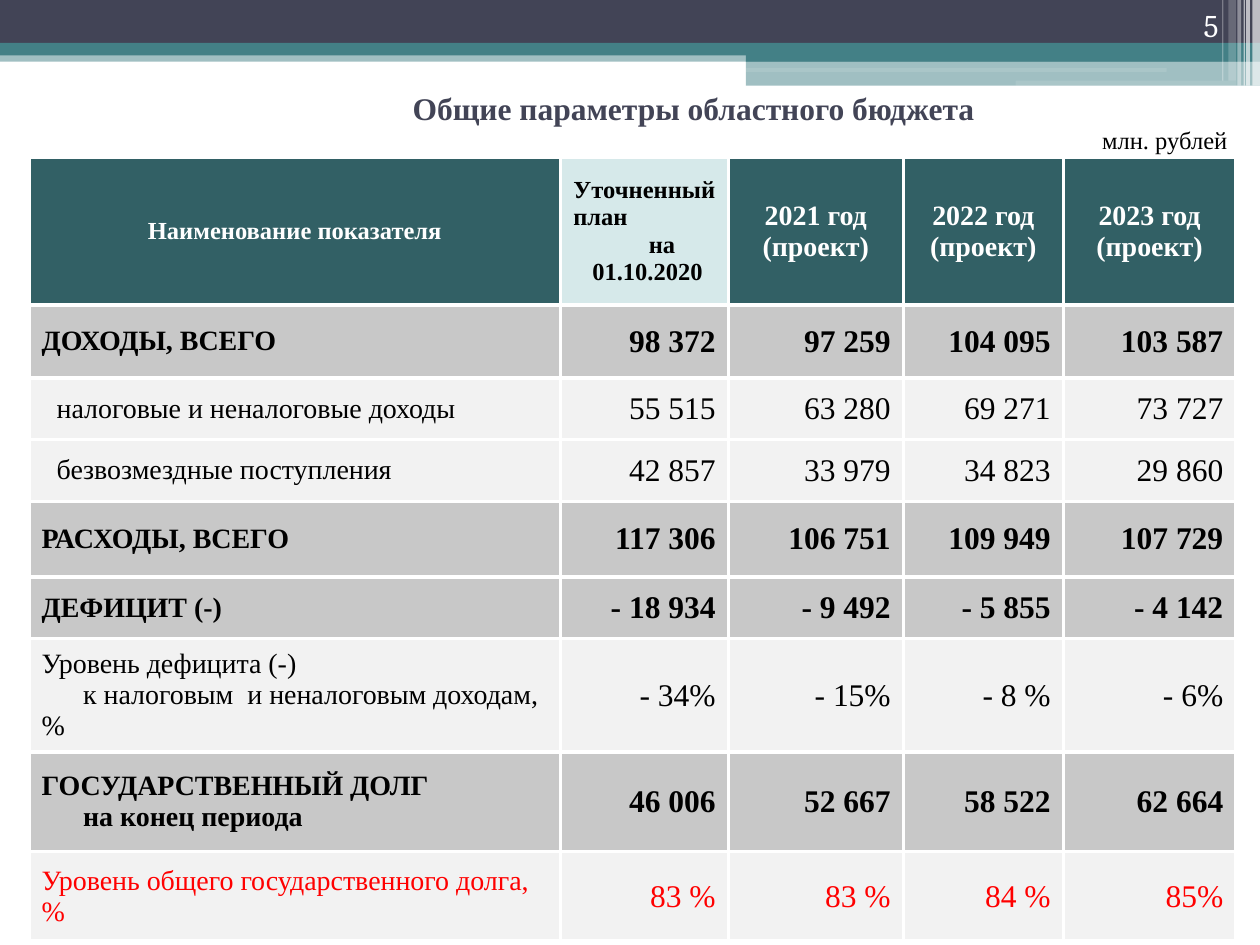
from lxml.etree import SubElement
from pptx import Presentation
from pptx.dml.color import RGBColor
from pptx.enum.shapes import MSO_SHAPE
from pptx.enum.text import MSO_ANCHOR, PP_ALIGN
from pptx.oxml.ns import qn
from pptx.util import Emu, Inches, Pt

SERIF = "Times New Roman"
TEAL, NAVY, WHITE, BLACK, RED = "438086", "424456", "FFFFFF", "000000", "FF0000"
DARK, PALE, GREY, LIGHT = "326065", "D6E9EA", "C8C8C8", "F2F2F2"
LEFT, MID, RIGHT = PP_ALIGN.LEFT, PP_ALIGN.CENTER, PP_ALIGN.RIGHT

BANDS = [
    (0, 0.4, 10, 0.09, TEAL, 50),
    (0, 0, 10, 0.34, NAVY, 100),
    (0, 0.34, 10, 0.1, TEAL, 100),
    (5.92, 0.39, 4.08, 0.1, TEAL, 100),
    (5.92, 0.48, 4.08, 0.2, TEAL, 50),
]
STREAKS = [(5.91, 0.54, 3.35, 0.03, WHITE, 11), (8.06, 0.64, 1.75, 0.04, WHITE, 11)]
STRIPES = [
    (9.94, 0, 0.06, 0.68, WHITE, 65),
    (9.89, 0, 0.03, 0.68, WHITE, 65),
    (9.87, 0, 0.01, 0.68, WHITE, 60),
    (9.82, 0, 0.03, 0.68, WHITE, 40),
    (9.75, 0, 0.06, 0.64, WHITE, 20),
    (9.7, 0, 0.01, 0.64, WHITE, 30),
]

COLS = [4.22, 1.33, 1.39, 1.27, 1.37]
ROWS = [1.17, 0.58, 0.49, 0.49, 0.6, 0.49, 0.6, 0.79, 0.71]
YEARS = ["2021", "2022", "2023"]
DATA = [
    ("total", "ДОХОДЫ, ВСЕГО", ["98 372", "97 259", "104 095", "103 587"]),
    ("part", "налоговые и неналоговые доходы", ["55 515", "63 280", "69 271", "73 727"]),
    ("part", "безвозмездные поступления", ["42 857", "33 979", "34 823", "29 860"]),
    ("total", "РАСХОДЫ, ВСЕГО", ["117 306", "106 751", "109 949", "107 729"]),
    ("total", "ДЕФИЦИТ (-)", ["- 18 934", "- 9 492", "- 5 855", "- 4 142"]),
    ("level", "Уровень дефицита (-)\nк налоговым  и неналоговым доходам, %",
     ["- 34%", "- 15%", "- 8 %", "- 6%"]),
    ("total", "ГОСУДАРСТВЕННЫЙ ДОЛГ\nна конец периода",
     ["46 006", "52 667", "58 522", "62 664"]),
    ("alert", "Уровень общего государственного долга, %", ["83 %", "83 %", "84 %", "85%"]),
]


def tint(fill, color, alpha=100):
    """Fill with a hex colour at a percentage of opacity."""
    fill.solid()
    fill.fore_color.rgb = RGBColor.from_string(color)
    if alpha < 100:
        node = fill._xPr.find(qn("a:solidFill"))[0]
        SubElement(node, qn("a:alpha"), val=str(alpha * 1000))


def write(frame, text, size, color, align, bold=False, font=SERIF):
    """Put text in a frame and format every paragraph."""
    frame.text = text
    for para in frame.paragraphs:
        para.alignment = align
        for run in para.runs:
            run.font.name = font
            run.font.size = Pt(size)
            run.font.bold = bold
            run.font.color.rgb = RGBColor.from_string(color)


def indent(para, margin, first=0):
    """Set the left margin and first-line indent of a paragraph."""
    props = para._p.get_or_add_pPr()
    props.set("marL", str(Inches(margin)))
    props.set("indent", str(Inches(first)))


def edge(cell):
    """Draw white lines around a cell."""
    props = cell._tc.get_or_add_tcPr()
    for spot, side in enumerate(("L", "R", "T", "B")):
        line = props.makeelement(qn(f"a:ln{side}"), {"w": str(Pt(2.25))})
        SubElement(SubElement(line, qn("a:solidFill")), qn("a:srgbClr"), val=WHITE)
        props.insert(spot, line)


def put(cell, text, fill, size, color, align, bold):
    """Fill and write one table cell."""
    tint(cell.fill, fill)
    edge(cell)
    cell.vertical_anchor = MSO_ANCHOR.MIDDLE
    write(cell.text_frame, text, size, color, align, bold)


def add_bars(slide, bars, kind=MSO_SHAPE.RECTANGLE):
    """Add plain bars of one kind."""
    for x, y, w, h, color, alpha in bars:
        bar = slide.shapes.add_shape(kind, Inches(x), Inches(y), Inches(w), Inches(h))
        bar.shadow.inherit = False
        bar.line.fill.background()
        tint(bar.fill, color, alpha)


def add_banner(slide):
    """Build the decorated strip along the top."""
    add_bars(slide, BANDS)
    add_bars(slide, STREAKS, MSO_SHAPE.ROUNDED_RECTANGLE)
    add_bars(slide, STRIPES)


def add_title(slide, x, y, w, h):
    """Place the slide title."""
    title = slide.shapes.title
    title.left, title.top, title.width, title.height = map(Inches, (x, y, w, h))
    title.text_frame.vertical_anchor = MSO_ANCHOR.MIDDLE
    write(title.text_frame, "Общие параметры областного бюджета", 18, NAVY, MID, True)


def add_note(slide, box, text, size, color, font, anchor):
    """Add a right-aligned line of text."""
    frame = slide.shapes.add_textbox(*map(Inches, box)).text_frame
    frame.word_wrap = True
    frame.vertical_anchor = anchor
    write(frame, text, size, color, RIGHT, font=font)


def add_head(table):
    """Write the header row."""
    put(table.cell(0, 0), "Наименование показателя", DARK, 14, WHITE, MID, True)
    plan = table.cell(0, 1)
    put(plan, "Уточненный\nплан\nна\n01.10.2020", PALE, 14, BLACK, MID, True)
    lines = plan.text_frame.paragraphs
    lines[1].alignment = LEFT
    indent(lines[2], 0.28)
    indent(lines[3], 0.05)
    for col, year in enumerate(YEARS, 2):
        put(table.cell(0, col), f"{year} год\n(проект)", DARK, 16, WHITE, MID, True)


def add_budget(slide, x, y):
    """Build the budget table."""
    wide, high = Inches(sum(COLS)), Inches(sum(ROWS))
    table = slide.shapes.add_table(
        len(ROWS), len(COLS), Inches(x), Inches(y), wide, high).table
    for col, size in zip(table.columns, COLS):
        col.width = Emu(Inches(size))
    for row, size in zip(table.rows, ROWS):
        row.height = Emu(Inches(size))
    add_head(table)
    for row, (kind, label, values) in enumerate(DATA, 1):
        bold = kind == "total"
        fill = GREY if bold else LIGHT
        color = RED if kind == "alert" else BLACK
        name = table.cell(row, 0)
        put(name, label, fill, 16, color, LEFT, bold)
        first, *rest = name.text_frame.paragraphs
        if kind == "part":
            indent(first, 0.12)
        for para in rest:
            indent(para, 0, 0.33)
        for col, value in enumerate(values, 1):
            put(table.cell(row, col), value, fill, 18, color, RIGHT, bold)


def main():
    """Build and save the slide."""
    deck = Presentation()
    deck.slide_width, deck.slide_height = Inches(10), Inches(7.5)
    slide = deck.slides.add_slide(deck.slide_layouts[5])
    add_banner(slide)
    add_title(slide, 1.48, 0.62, 8.05, 0.47)
    add_note(slide, (8.94, 0, 0.83, 0.4), "5", 18, WHITE, "Cambria", MSO_ANCHOR.BOTTOM)
    add_budget(slide, 0.23, 1.25)
    add_note(slide, (8.36, 0.94, 1.48, 0.34), "млн. рублей", 14, BLACK, SERIF,
             MSO_ANCHOR.TOP)
    deck.save("out.pptx")


if __name__ == "__main__":
    main()
